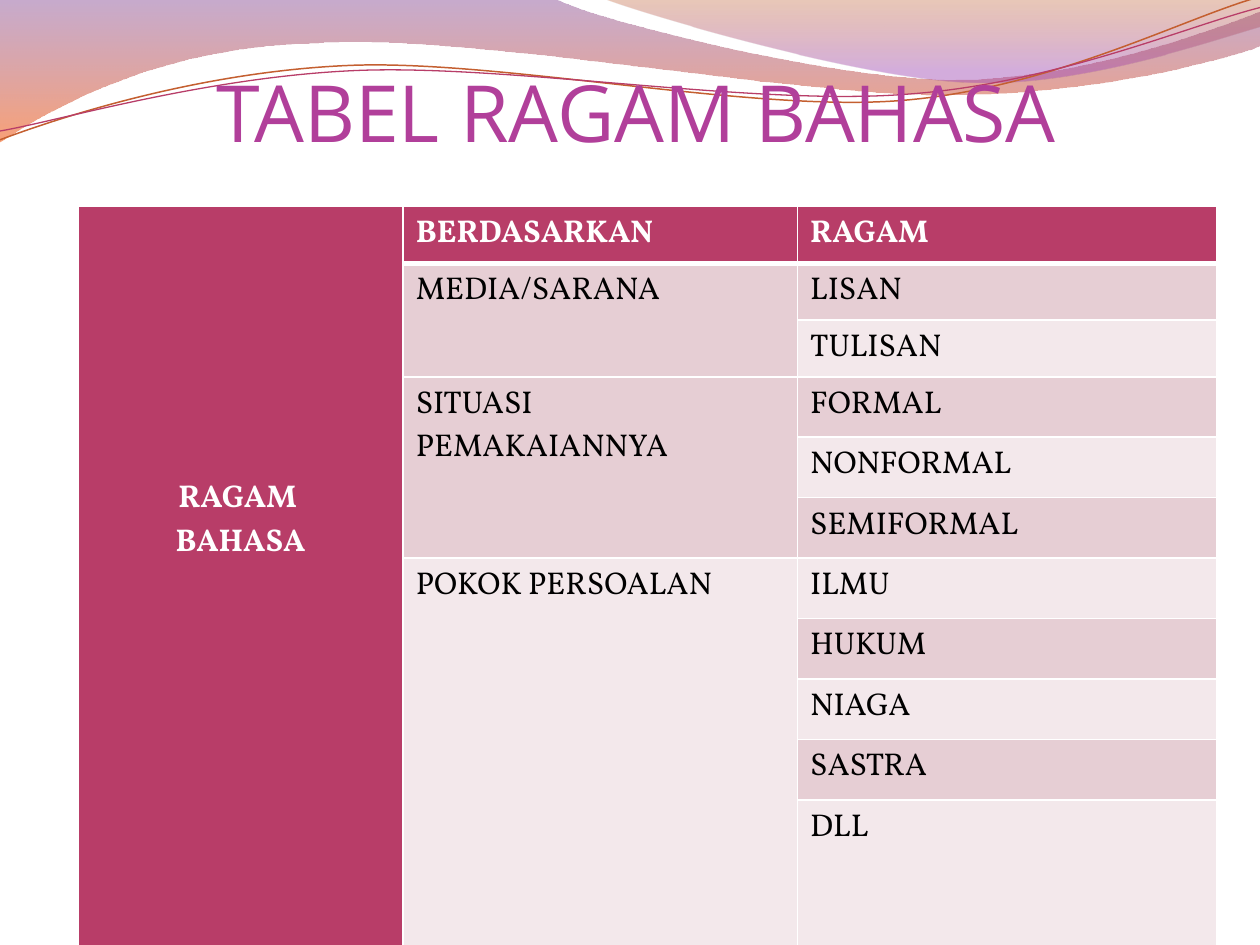
from lxml.etree import SubElement
from pptx import Presentation
from pptx.dml.color import RGBColor
from pptx.enum.text import MSO_ANCHOR, PP_ALIGN
from pptx.oxml.ns import qn
from pptx.util import Inches, Pt

COLORS = {
    "title": "B13F9A", "header": "B83D68", "white": "FFFFFF", "black": "000000",
    "odd_band": "E6CED4", "even_band": "F3E8EB",
    "violet": "834591", "orange": "F35307", "rust": "B74915", "lilac": "A14BB4",
    "copper": "C45F30",
}
UNIT = Inches(0.01)
COLUMN_WIDTHS = (2.58, 3.13, 3.33)
ROW_HEIGHTS = [0.45] * 3 + [0.48] * 7 + [1.15]
VARIETIES = {
    "MEDIA/SARANA": ("LISAN", "TULISAN"),
    "SITUASI PEMAKAIANNYA": ("FORMAL", "NONFORMAL", "SEMIFORMAL"),
    "POKOK PERSOALAN": ("ILMU", "HUKUM", "NIAGA", "SASTRA", "DLL"),
}
LEFT_WAVE = [
    (440, -1),
    (476, 17, 664, 63, 758, 63),
    (853, 63, 958, 26, 1000, 9),
    (1001, 36),
    (983, 44, 870, 76, 746, 75),
    (622, 75, 382, 28, 257, 34),
    (129, 36, 46, 83, -1, 113),
]
RIGHT_WAVE = [
    (509, 11, 682, 62, 769, 65),
    (856, 69, 961, 32, 1000, 21),
    (1000, 0),
]
COPPER_LINE = [
    (48, 93, 158, 57, 277, 52),
    (395, 47, 593, 89, 713, 80),
    (833, 71, 938, 15, 998, -2),
]
ROSE_LINE = [
    (47, 96, 164, 61, 283, 56),
    (403, 51, 597, 84, 717, 75),
    (836, 67, 941, 21, 1000, 6),
]


def color(name):
    return RGBColor.from_string(COLORS[name])


def add_curve(slide, start, segments, close):
    points = [pair for segment in segments for pair in zip(segment[::2], segment[1::2])]
    builder = slide.shapes.build_freeform(*start, scale=UNIT)
    builder.add_line_segments(points, close=close)
    curve = builder.convert_to_shape()
    curve.shadow.inherit = False
    steps = iter(list(curve.element.iter(qn("a:lnTo"))))
    for segment in segments:
        first = next(steps)
        if len(segment) == 6:
            first.tag = qn("a:cubicBezTo")
            for _ in range(2):
                step = next(steps)
                first.append(step[0])
                step.getparent().remove(step)
    return curve


def add_wave(slide, start, segments, stops):
    wave = add_curve(slide, start, segments, True)
    wave.line.fill.background()
    wave.fill.gradient()
    wave.fill.gradient_angle = 270
    for stop, (position, name, _) in zip(wave.fill.gradient_stops, stops):
        stop.position = position
        stop.color.rgb = color(name)
    for tint, (_, _, opacity) in zip(wave.element.iter(qn("a:srgbClr")), stops):
        SubElement(tint, qn("a:alpha"), val=str(opacity * 1000))


def add_ribbon(slide, start, segments, name, width):
    ribbon = add_curve(slide, start, segments, False)
    ribbon.fill.background()
    ribbon.line.color.rgb = color(name)
    ribbon.line.width = Pt(width)


def add_title(slide, width, height):
    box = slide.shapes.add_textbox(
        int(width * 0.055), int(height * 0.052), int(width * 0.9), int(height * 0.116))
    frame = box.text_frame
    frame.word_wrap = True
    frame.vertical_anchor = MSO_ANCHOR.BOTTOM
    frame.margin_left = frame.margin_right = frame.margin_bottom = 0
    heading = frame.paragraphs[0]
    heading.text = "TABEL RAGAM BAHASA"
    heading.alignment = PP_ALIGN.CENTER
    heading.font.name = "Open Sans"
    heading.font.size = Pt(45)
    heading.font.color.rgb = color("title")


def set_borders(cell, bottom_width):
    properties = cell._tc.get_or_add_tcPr()
    widths = {"a:lnL": 1, "a:lnR": 1, "a:lnT": 1, "a:lnB": bottom_width}
    for index, (side, width) in enumerate(widths.items()):
        border = SubElement(properties, qn(side), w=str(Pt(width)))
        fill = SubElement(border, qn("a:solidFill"))
        SubElement(fill, qn("a:srgbClr"), val=COLORS["white"])
        properties.insert(index, border)


def write_cell(cell, text, is_header):
    cell.text = text
    for paragraph in cell.text_frame.paragraphs:
        paragraph.font.name = "Vollkorn"
        paragraph.font.size = Pt(18)
        paragraph.font.bold = is_header
        paragraph.font.color.rgb = color("white" if is_header else "black")


def add_variety_table(slide):
    table = slide.shapes.add_table(
        len(ROW_HEIGHTS), len(COLUMN_WIDTHS), Inches(0.62), Inches(1.64),
        Inches(sum(COLUMN_WIDTHS)), Inches(sum(ROW_HEIGHTS))).table
    table.first_row = table.horz_banding = False
    for column, width in zip(table.columns, COLUMN_WIDTHS):
        column.width = Inches(width)
    for row, height in zip(table.rows, ROW_HEIGHTS):
        row.height = Inches(height)

    texts = {(0, 0): "RAGAM \nBAHASA", (0, 1): "BERDASARKAN", (0, 2): "RAGAM"}
    bands = {}
    row_index = 1
    for basis, varieties in VARIETIES.items():
        last = row_index + len(varieties) - 1
        table.cell(row_index, 1).merge(table.cell(last, 1))
        texts[row_index, 1] = basis
        for offset, variety in enumerate(varieties):
            texts[row_index + offset, 2] = variety
            bands[row_index + offset] = row_index
        row_index = last + 1
    table.cell(0, 0).merge(table.cell(row_index - 1, 0))

    for row in range(len(ROW_HEIGHTS)):
        for column in range(len(COLUMN_WIDTHS)):
            cell = table.cell(row, column)
            is_header = row == 0 or column == 0
            band = bands[row] if column == 1 and row else row
            body = "odd_band" if band % 2 else "even_band"
            cell.fill.solid()
            cell.fill.fore_color.rgb = color("header" if is_header else body)
            set_borders(cell, 3 if row == 0 else 1)
            if (row, column) in texts:
                write_cell(cell, texts[row, column], is_header)

    subject = table.cell(0, 0)
    subject.margin_top = Inches(2.15)
    for paragraph in subject.text_frame.paragraphs:
        paragraph.alignment = PP_ALIGN.CENTER


def main():
    presentation = Presentation()
    presentation.slide_width = Inches(10)
    presentation.slide_height = Inches(7.5)
    slide = presentation.slides.add_slide(presentation.slide_layouts[6])
    add_wave(slide, (0, 0), LEFT_WAVE, [(0, "violet", 45), (1, "orange", 55)])
    add_wave(slide, (479, -1), RIGHT_WAVE, [(0, "rust", 30), (0.8, "lilac", 45)])
    add_ribbon(slide, (0, 111), COPPER_LINE, "copper", 0.85)
    add_ribbon(slide, (0, 104), ROSE_LINE, "header", 0.75)
    add_title(slide, presentation.slide_width, presentation.slide_height)
    add_variety_table(slide)
    presentation.save("out.pptx")


if __name__ == "__main__":
    main()
